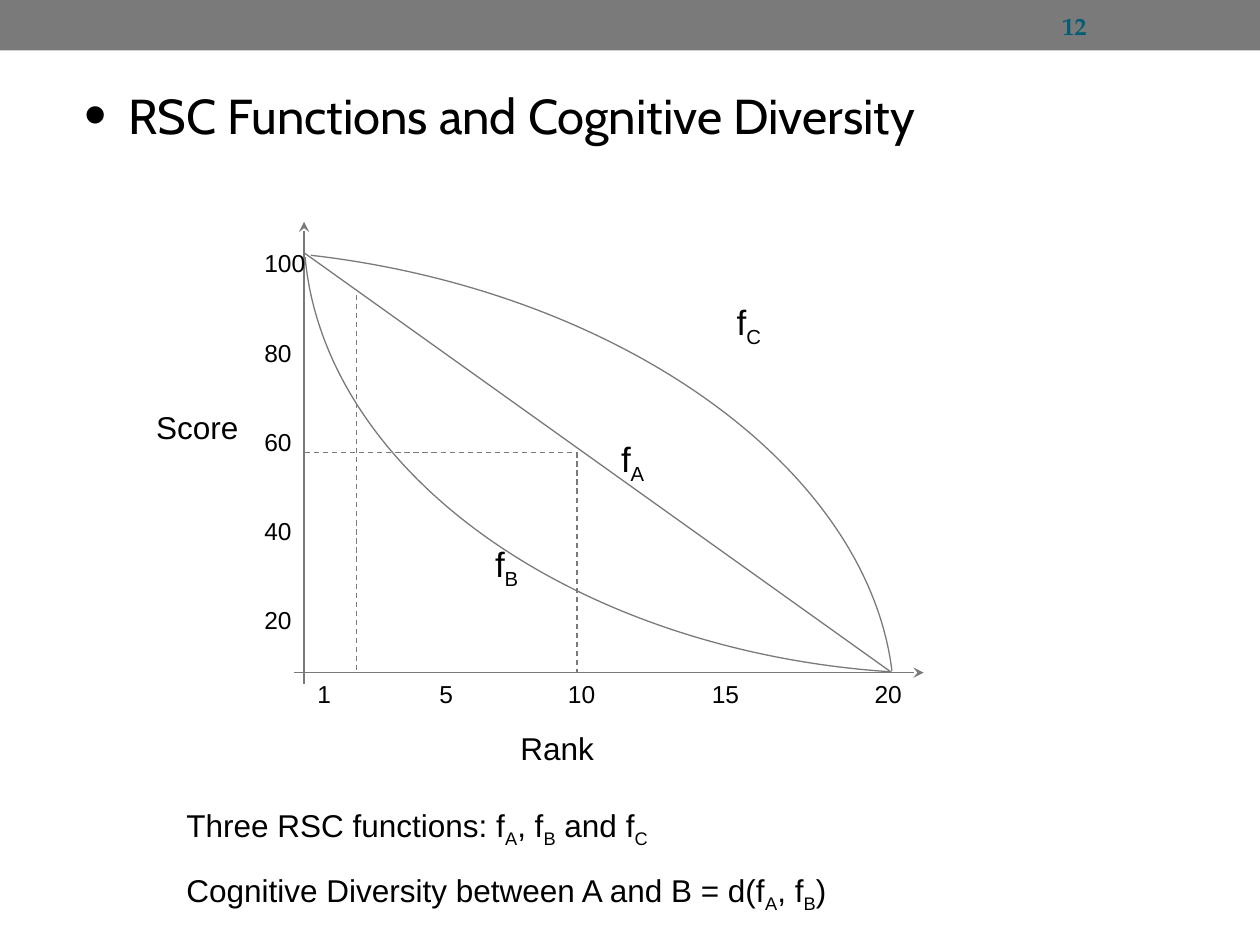
from lxml.etree import SubElement
from pptx import Presentation
from pptx.dml.color import RGBColor
from pptx.enum.dml import MSO_LINE
from pptx.enum.shapes import MSO_CONNECTOR, MSO_SHAPE
from pptx.enum.text import MSO_ANCHOR, PP_ALIGN
from pptx.oxml.ns import qn
from pptx.util import Cm, Pt

rgb = RGBColor.from_string
GREY = "7A7A7A"
BLACK = "000000"


def write(par, text, size=18, font="Arial", color=BLACK, bold=False):
    head, *rest = text.split("_")
    parts = [(head, False)]
    for part in rest:
        parts += [(part[0], True), (part[1:], False)]
    for words, sub in parts:
        if words:
            run = par.add_run()
            run.text = words
            run.font.size = Pt(size)
            run.font.name = font
            run.font.bold = bold
            run.font.color.rgb = rgb(color)
            if sub:
                run._r.get_or_add_rPr().set("baseline", "-25000")


def label(lines, left, top, width, height, wrap=True, gap=0, space=1,
          anchor=MSO_ANCHOR.TOP, **style):
    box = slide.shapes.add_textbox(Cm(left), Cm(top), Cm(width), Cm(height))
    frame = box.text_frame
    frame.word_wrap = wrap
    frame.vertical_anchor = anchor
    for i, line in enumerate(lines):
        par = frame.add_paragraph() if i else frame.paragraphs[0]
        par.line_spacing = space
        par.space_before = Pt(gap if i else 0)
        write(par, line, **style)
    return frame


deck = Presentation()
deck.slide_width, deck.slide_height = Cm(25.4), Cm(19.05)
slide = deck.slides.add_slide(deck.slide_layouts[5])

bar = slide.shapes.add_shape(MSO_SHAPE.RECTANGLE, 0, 0, Cm(25.4), Cm(1.02))
bar.shadow.inherit = False
bar.fill.solid()
bar.fill.fore_color.rgb = rgb(GREY)
bar.line.fill.background()
label(["12"], 21.16, 0.08, 2.97, 0.86, anchor=MSO_ANCHOR.MIDDLE,
      size=14, font="TeX Gyre Pagella", color="045C75", bold=True)

title = slide.shapes.title
title.left, title.top = Cm(1.07), Cm(1.47)
title.width, title.height = Cm(24.33), Cm(1.7)
frame = title.text_frame
frame.word_wrap = True
frame.vertical_anchor = MSO_ANCHOR.TOP
frame.margin_left = frame.margin_right = Cm(0.25)
frame.margin_top = frame.margin_bottom = Cm(0.25)
par = frame.paragraphs[0]
par.alignment = PP_ALIGN.LEFT
props = par._p.get_or_add_pPr()
props.set("marL", str(Cm(1.27)))
props.set("indent", str(Cm(-0.89)))
tint = SubElement(props, qn("a:buClr"))
SubElement(tint, qn("a:srgbClr"), val=BLACK)
SubElement(props, qn("a:buSzPct"), val="130000")
SubElement(props, qn("a:buFont"), typeface="Arial")
SubElement(props, qn("a:buChar"), char="•")
write(par, "RSC Functions and Cognitive Diversity", size=28, font="Cabin")

base, mid = 13.56, 9.12
for x1, y1, x2, y2, kind in [
    (6.13, 13.79, 6.13, 4.47, "axis"),
    (5.92, base, 18.62, base, "axis"),
    (6.15, 5.11, 17.98, base, "plain"),
    (6.15, mid, 11.63, mid, "dash"),
    (7.19, 5.94, 7.19, base, "dash"),
    (11.63, mid, 11.63, base, "dash"),
]:
    line = slide.shapes.add_connector(
        MSO_CONNECTOR.STRAIGHT, Cm(x1), Cm(y1), Cm(x2), Cm(y2))
    line.line.color.rgb = rgb(GREY)
    line.line.width = Pt(0.75)
    if kind == "dash":
        line.line.dash_style = MSO_LINE.DASH
    if kind == "axis":
        SubElement(line.line._get_or_add_ln(), qn("a:tailEnd"), type="stealth")
    SubElement(line._element.spPr, qn("a:effectLst"))

for left, top, width, height, turn, start, end in [
    (-7.14, 5.11, 25.22, 16.33, 7.2, 161.05, 212.36),
    (6.12, -3.63, 25.15, 17.2, 182.7, 163.3, 213.79),
]:
    arc = slide.shapes.add_shape(
        MSO_SHAPE.ARC, Cm(left), Cm(top), Cm(width), Cm(height))
    arc.rotation = turn
    arc.adjustments[0], arc.adjustments[1] = start, end
    arc.shadow.inherit = False
    arc.fill.background()
    arc.line.color.rgb = rgb(GREY)
    arc.line.width = Pt(0.75)

for name, left, top in [("f_C", 14.6, 5.94), ("f_A", 12.27, 8.69),
                        ("f_B", 9.73, 10.82)]:
    label([name], left, top, 1.03, 1.12, wrap=False, size=20)

label(["100", "80", "60", "40", "20"], 5.08, 4.88, 1.9, 8.64, gap=34.2, size=14)
ranks = label([], 6.15, base, 12.4, 0.86)
par = ranks.paragraphs[0]
tabs = SubElement(par._p.get_or_add_pPr(), qn("a:tabLst"))
for stop in (2.46, 5.05, 7.95, 11.23):
    SubElement(tabs, qn("a:tab"), pos=str(Cm(stop)), algn="l")
write(par, "1\t5\t10\t15\t20", size=14)

label(["Rank"], 10.24, 14.58, 2.01, 1.02, wrap=False)
label(["Score"], 2.9, 8.1, 2.18, 1.02, wrap=False)
label(["Three RSC functions: f_A, f_B and f_C",
       "Cognitive Diversity between A and B = d(f_A, f_B)"],
      3.51, 15.7, 19.15, 2.41, space=1.5)

deck.save("out.pptx")
